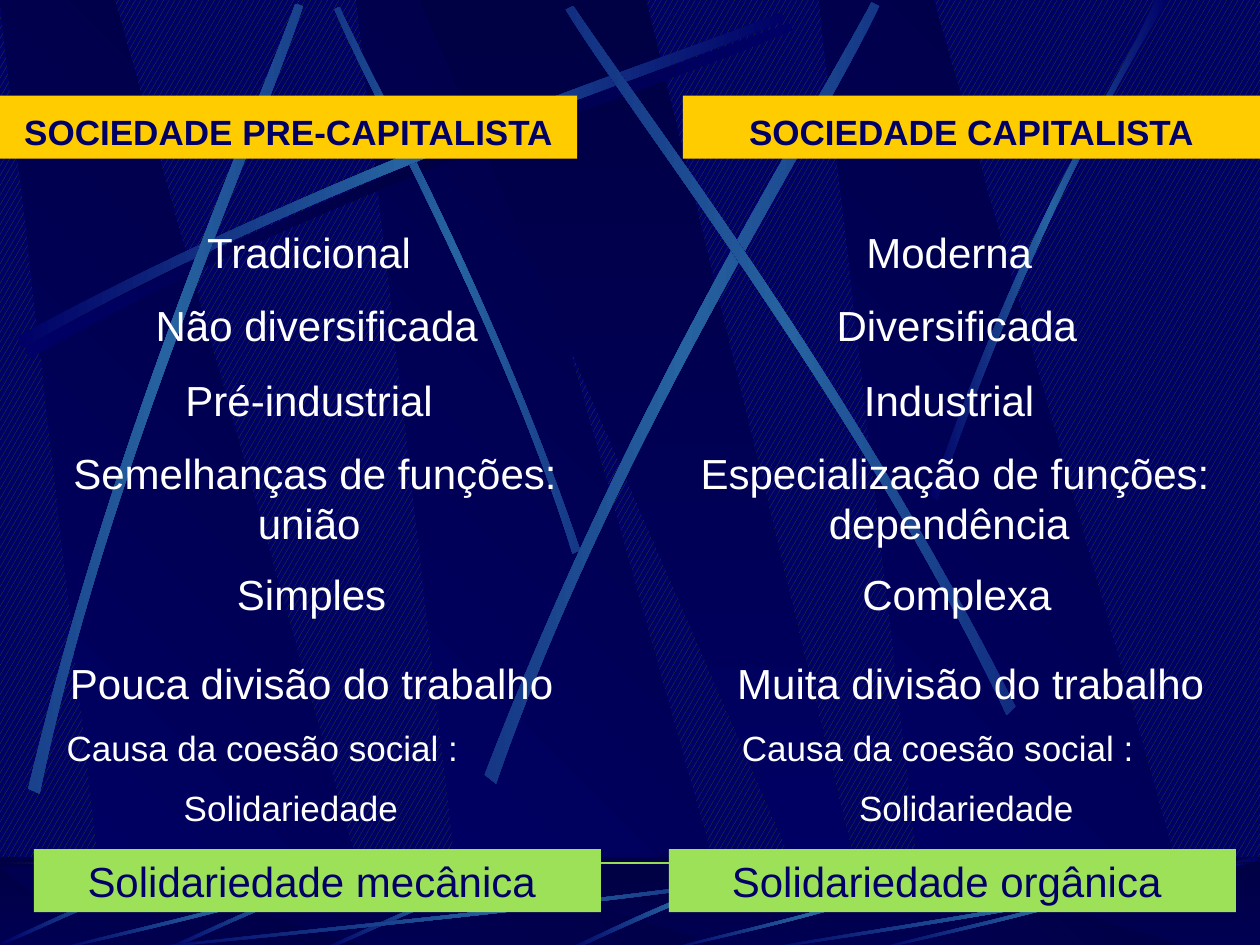
from math import cos, radians, sin

from lxml import etree
from pptx import Presentation
from pptx.dml.color import RGBColor
from pptx.enum.dml import MSO_PATTERN
from pptx.enum.shapes import MSO_SHAPE
from pptx.enum.text import MSO_ANCHOR, PP_ALIGN
from pptx.oxml.ns import qn
from pptx.util import Inches, Pt

RECTANGLE = MSO_SHAPE.RECTANGLE
CONFETTI = MSO_PATTERN.LARGE_CONFETTI
TOP = MSO_ANCHOR.TOP
LEFT, CENTER = PP_ALIGN.LEFT, PP_ALIGN.CENTER

NAVY, DARK, BEAM, WHITE = "000066", "000044", "2663A0", "FFFFFF"
GOLD, GREEN, OLIVE = "FFCC00", "9CE157", "2D5513"
GLOW = [NAVY, BEAM, NAVY]


def paint(shape, colours, angle=0):
    """Fill with one colour, or with an even gradient at a clockwise angle."""
    shape.shadow.inherit = False
    shape.line.fill.background()
    if len(colours) == 1:
        shape.fill.solid()
        shape.fill.fore_color.rgb = RGBColor.from_string(colours[0])
        return
    shape.fill.gradient()
    gradient = shape._element.spPr.find(qn("a:gradFill"))
    gradient.set("rotWithShape", "0")
    for child in list(gradient):
        gradient.remove(child)
    stops = etree.SubElement(gradient, qn("a:gsLst"))
    for index, colour in enumerate(colours):
        position = 100000 * index // (len(colours) - 1)
        stop = etree.SubElement(stops, qn("a:gs"), pos=str(position))
        etree.SubElement(stop, qn("a:srgbClr"), val=colour)
    etree.SubElement(gradient, qn("a:lin"), ang=str(round(angle * 60000)), scaled="0")


def write(box, lines, size=24, colour=WHITE, bold=False, align=CENTER,
          spacing=None, indent=0):
    """Fill the box with paragraphs; those after the first are indented."""
    frame = box.text_frame
    frame.word_wrap = True
    frame.vertical_anchor = TOP
    for index, line in enumerate(lines):
        para = frame.add_paragraph() if index else frame.paragraphs[0]
        para.alignment = align
        if spacing:
            para.line_spacing = spacing
        if index:
            para.space_before = Pt(size / 2)
            para._p.get_or_add_pPr().set("marL", str(Inches(indent)))
        span = para.add_run()
        span.text = line
        span.font.size = Pt(size)
        span.font.name = "Arial"
        span.font.bold = bold
        span.font.color.rgb = RGBColor.from_string(colour)


deck = Presentation()
deck.slide_width, deck.slide_height = Inches(10), Inches(7.5)
page = deck.slides.add_slide(deck.slide_layouts[6])
backdrop = page.background.fill
backdrop.patterned()
backdrop.pattern = CONFETTI
backdrop.fore_color.rgb = RGBColor.from_string(OLIVE)
backdrop.back_color.rgb = RGBColor.from_string(NAVY)

# Scenery: 2 points are rectangle corners, 4 a polygon, 8 a ribbon of two curves.
# The angle turns a ribbon itself, and the gradient of any other shape.
wall, floor = [], []
for left in (2.83, 0, 6.5):
    for part, top, bottom in ((wall, 0, 7.52), (floor, 6.88, 7.55)):
        band = [(left + 0.86, bottom), (left + 3.02, bottom), (left + 0.91, top), (left, top)]
        part.append((band, [NAVY, DARK], 315))
for part, top, bottom in ((wall, 0, 7.51), (floor, 6.88, 7.55)):
    part.append(([(3.33, top), (6.58, bottom), (6.94, bottom), (5.13, top)], [DARK, NAVY], 90))

sweep = [(0.14, 2.67), (2.78, 1.25), (5.18, 0.51), (6.2, 0.1),
         (6.23, 0.16), (5.22, 0.61), (2.48, 1.43), (0.17, 2.77)]
wall += [
    ([(x + 0.06, y + 0.08) for x, y in sweep], [NAVY, DARK, NAVY], 0),
    ([(4.6, 4.36), (3.91, 2.34), (3.02, 0.77), (2.69, 0.05),
      (2.65, 0.07), (2.95, 0.79), (3.98, 2.58), (4.54, 4.39)], GLOW, 45),
    (sweep, GLOW, 0),
    ([(0.23, 6.25), (0.93, 3.34), (1.97, 1.05), (2.35, 0.02),
      (2.41, 0.04), (2.07, 1.09), (0.86, 3.68), (0.32, 6.29)], GLOW, 311.7),
    ([(3.85, 6.14), (4.98, 3.2), (6.38, 1.02), (6.92, 0.01),
      (6.98, 0.04), (6.49, 1.08), (4.86, 3.55), (3.94, 6.21)], GLOW, 321.6),
    ([(8.06, 5.6), (6.7, 2.93), (5.16, 0.95), (4.55, 0.04),
      (4.49, 0.07), (5.07, 1.01), (6.85, 3.25), (7.99, 5.67)], GLOW, 34.7),
    ([(7.38, 3.94), (8.14, 1.73), (8.88, 0.66), (9.17, 0),
      (9.27, 0), (8.36, 1.45), (7.69, 3.22), (7.44, 3.97)], GLOW, 0),
]

floor_corners = [(0, 6.8), (10, 7.55)]
floor.insert(0, (floor_corners, [DARK, NAVY], 90))
floor.append((floor_corners, [DARK], 0))
floor.append(([(6.27, 6.82), (5.37, 7.09), (4.77, 7.42), (4.48, 7.54),
               (4.53, 7.55), (4.9, 7.38), (5.71, 7), (6.28, 6.85)], GLOW, 0))
ray = [(4.42, 6.8), (3.55, 7.05), (2.87, 7.4), (2.56, 7.53),
       (2.57, 7.55), (2.88, 7.43), (3.65, 7.03), (4.44, 6.83)]
for shift, lift in ((0, 0), (1.25, 0), (2.55, 0.05)):
    floor.append(([(x - shift, y - lift) for x, y in ray], GLOW, 315))
fan = [(1, 0.04), (0.57, 0.57), (0.17, 0.85), (0, 1),
       (0, 0.99), (0.16, 0.81), (0.61, 0.51), (0.99, 0)]
for left, top, width in ((1, 6.8, 6.17), (0.42, 6.8, 2.67), (5.27, 6.89, 2.31),
                         (6.92, 6.8, 2.67), (6, 6.8, 4)):
    floor.append(([(left + x * width, top + y * (7.55 - top)) for x, y in fan], GLOW, 0))
floor.append(([(0, 6.84), (10, 6.86)], [DARK, GREEN, DARK], 0))

for points, colours, angle in wall + floor:
    if len(points) == 2:
        (left, top), (right, bottom) = points
        shape = page.shapes.add_shape(RECTANGLE, Inches(left), Inches(top),
                                      Inches(right - left), Inches(bottom - top))
    else:
        turn = angle if len(points) == 8 else 0
        center_x, center_y = [(min(values) + max(values)) / 2 for values in zip(*points)]
        cosine, sine = cos(radians(turn)), sin(radians(turn))
        corners = [(Inches(center_x + (x - center_x) * cosine + (y - center_y) * sine),
                    Inches(center_y + (y - center_y) * cosine - (x - center_x) * sine))
                   for x, y in points]
        builder = page.shapes.build_freeform(*corners[0])
        builder.add_line_segments(corners[1:], close=True)
        shape = builder.convert_to_shape()
        shape.rotation = turn
        if len(points) == 8:
            angle = 0
            lines = list(shape._element.spPr.iter(qn("a:lnTo")))
            for side in (lines[:3], lines[4:7]):
                curve = etree.Element(qn("a:cubicBezTo"))
                side[0].addprevious(curve)
                for line in side:
                    curve.append(line[0])
                    line.getparent().remove(line)
    paint(shape, colours, angle)
    if len(colours) == 1:
        colour_element = shape._element.spPr.find(qn("a:solidFill"))[0]
        etree.SubElement(colour_element, qn("a:alpha"), val="50000")

# The two societies, side by side
ROW_TOPS = [1.75, 2.33, 2.92, 3.5, 4.46, 5.17]
societies = [
    ("SOCIEDADE PRE-CAPITALISTA", 0, [0.25, 0.31, 0.25, 0.25, 0.27, 0.27],
     ["Tradicional ", "Não diversificada ", "Pré-industrial ",
      "Semelhanças de funções: união ", "Simples ", "Pouca divisão do trabalho "],
     0.43, "Solidariedade mecânica ", 0.27),
    ("SOCIEDADE CAPITALISTA", 5.42, [5.33, 5.39, 5.33, 5.33, 5.39, 5.5],
     ["Moderna ", "Diversificada ", "Industrial ",
      "Especialização de funções: dependência ", "Complexa ", "Muita divisão do trabalho "],
     5.79, "Solidariedade orgânica ", 5.31),
]
for heading, heading_left, row_lefts, traits, cause_left, bond, bond_left in societies:
    box = page.shapes.add_shape(RECTANGLE, Inches(heading_left), Inches(0.76),
                                Inches(4.58), Inches(0.5))
    paint(box, [GOLD])
    write(box, [heading], size=20, colour=NAVY, bold=True, spacing=1.2)

    for left, top, trait in zip(row_lefts, ROW_TOPS, traits):
        height = 0.9 if ":" in trait else 0.5
        box = page.shapes.add_textbox(Inches(left), Inches(top), Inches(4.5), Inches(height))
        write(box, [trait])

    box = page.shapes.add_shape(RECTANGLE, Inches(bond_left), Inches(6.74),
                                Inches(4.5), Inches(0.5))
    paint(box, [GREEN])
    write(box, [bond], colour=NAVY)

    box = page.shapes.add_textbox(Inches(cause_left), Inches(5.72), Inches(3.7), Inches(0.94))
    write(box, ["Causa da coesão social :", "Solidariedade"], size=20, align=LEFT, indent=0.93)

deck.save("out.pptx")
